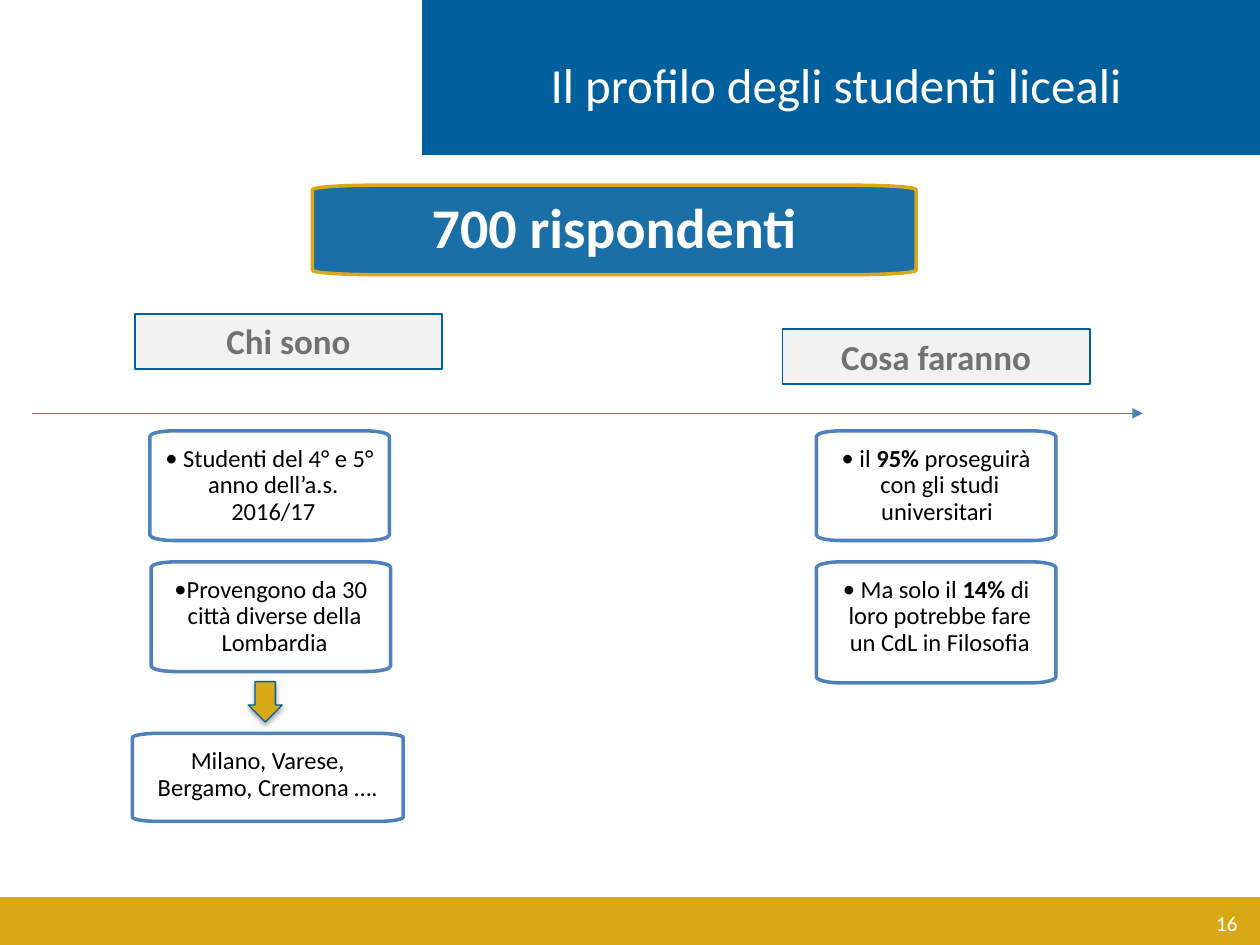
from lxml.etree import SubElement
from pptx import Presentation
from pptx.dml.color import RGBColor
from pptx.enum.shapes import MSO_CONNECTOR as CONN, MSO_SHAPE as SHAPE
from pptx.enum.text import MSO_ANCHOR as ANCHOR, MSO_AUTO_SIZE as AUTO, PP_ALIGN as ALIGN
from pptx.oxml.ns import qn
from pptx.util import Inches, Pt

BLUE, GOLD, CARD_LINE = "00609D", "D8A915", "4F81BD"
WHITE, BLACK, GREY, LIGHT = "FFFFFF", "000000", "727272", "F2F2F2"


def rgb(value):
    return RGBColor.from_string(value)


def put_text(sp, *parts, size=14, color=BLACK, bold=False, align=ALIGN.CENTER,
             anchor=ANCHOR.TOP, inset=(0.1, 0.05), spacing=1.0, bullet=False):
    """Fill the shape with one paragraph; every second part is bold."""
    tf = sp.text_frame
    tf.word_wrap = True
    tf.auto_size = AUTO.NONE
    tf.vertical_anchor = anchor
    tf.margin_left = tf.margin_right = Inches(inset[0])
    tf.margin_top = tf.margin_bottom = Inches(inset[1])
    p = tf.paragraphs[0]
    p.alignment = align
    p.line_spacing = spacing
    if bullet:
        pPr = p._p.get_or_add_pPr()
        pPr.set("marL", str(Inches(0.06)))
        pPr.set("indent", str(-Inches(0.06)))
        SubElement(pPr, qn("a:buFont"), typeface="Calibri")
        SubElement(pPr, qn("a:buChar"), char="•")
    for i, part in enumerate(parts):
        r = p.add_run()
        r.text = part
        r.font.name = "Calibri"
        r.font.size = Pt(size)
        r.font.bold = bold or i % 2 == 1
        r.font.color.rgb = rgb(color)


def round_corners(sp):
    """Turn every second side of an octagon into a quarter ellipse."""
    outline = sp._element.spPr.find(".//" + qn("a:path"))
    sides = list(outline)[:-1]
    ends = [(int(side[0].get("x")), int(side[0].get("y"))) for side in sides]
    for i in range(1, len(sides), 2):
        start, end = ends[i - 1], ends[i]
        corner = (start[0], end[1]) if i % 4 == 1 else (end[0], start[1])
        curve = sides[i]
        curve.tag = qn("a:cubicBezTo")
        curve.remove(curve[0])
        controls = [[round(a + 0.55 * (c - a)) for a, c in zip(point, corner)]
                    for point in (start, end)]
        for x, y in (*controls, end):
            SubElement(curve, qn("a:pt"), x=str(x), y=str(y))


class SlideBuilder:
    def __init__(self, slide):
        self.slide = slide
        self.shapes = slide.shapes

    def paint(self, sp, fill, line=None, width=1, opacity=100):
        sp.shadow.inherit = False
        sp.fill.solid()
        sp.fill.fore_color.rgb = rgb(fill)
        if opacity < 100:
            srgb = sp.fill._xPr.find(".//" + qn("a:srgbClr"))
            SubElement(srgb, qn("a:alpha"), val=str(opacity * 1000))
        if line:
            sp.line.color.rgb = rgb(line)
            sp.line.width = Pt(width)
        else:
            sp.line.fill.background()
        return sp

    def shape(self, kind, box, fill, **style):
        sp = self.shapes.add_shape(kind, *map(Inches, box))
        return self.paint(sp, fill, **style)

    def title(self, text, box):
        sp = self.shapes.title
        sp.left, sp.top, sp.width, sp.height = map(Inches, box)
        put_text(sp, text, size=28, color=WHITE)
        self.shapes._spTree.append(sp._element)  # in front of the header band

    def page_number(self, text, box):
        sp = self.shapes.add_textbox(*map(Inches, box))
        put_text(sp, text, size=12, color=WHITE, align=ALIGN.RIGHT, anchor=ANCHOR.MIDDLE)

    def heading(self, text, x, y):
        sp = self.shape(SHAPE.RECTANGLE, (x, y, 2.44, 0.44), LIGHT, line=BLUE)
        put_text(sp, text, size=20, color=GREY, bold=True)

    def card(self, box, *parts, fill=WHITE, line=CARD_LINE, **text_format):
        """Box with flat elliptical corners, a tenth of its width wide."""
        x, y, w, h = map(Inches, box)
        rx, ry = w // 10, h // 20
        right, bottom = x + w, y + h
        builder = self.shapes.build_freeform(x, y + ry)
        builder.add_line_segments([
            (x + rx, y), (right - rx, y), (right, y + ry), (right, bottom - ry),
            (right - rx, bottom), (x + rx, bottom), (x, bottom - ry)], close=True)
        sp = self.paint(builder.convert_to_shape(), fill, line=line, width=2, opacity=90)
        round_corners(sp)
        put_text(sp, *parts, inset=(0.12, 0.12), spacing=0.9, **text_format)

    def timeline(self, x1, x2, y):
        line = self.shapes.add_connector(CONN.STRAIGHT, *map(Inches, (x1, y, x2, y)))
        line.line.color.rgb = rgb("4B7EBC")
        line.line.width = Pt(0.75)
        SubElement(line.line._get_or_add_ln(), qn("a:tailEnd"), type="triangle")
        SubElement(line._element.spPr, qn("a:effectLst"))

    def down_arrow(self, box):
        sp = self.shape(SHAPE.DOWN_ARROW, box, GOLD, line=BLUE, width=0.75)
        sp.adjustments[0], sp.adjustments[1] = 0.6, 0.5
        effects = sp._element.spPr.find(qn("a:effectLst"))
        shadow = SubElement(effects, qn("a:outerShdw"), blurRad=str(Pt(3.1)),
                            dist=str(Pt(1.6)), dir="5400000", rotWithShape="0")
        color = SubElement(shadow, qn("a:srgbClr"), val=BLACK)
        SubElement(color, qn("a:alpha"), val="38000")


def main():
    prs = Presentation()
    prs.slide_width, prs.slide_height = Inches(10), Inches(7.5)
    s = SlideBuilder(prs.slides.add_slide(prs.slide_layouts[5]))

    s.shape(SHAPE.RECTANGLE, (0, 7.12, 10, 0.38), GOLD)
    s.shape(SHAPE.RECTANGLE, (3.35, 0, 6.65, 1.23), BLUE)
    s.page_number("16", (7.59, 7.13, 2.33, 0.4))
    s.title("Il profilo degli studenti liceali", (3.27, 0.38, 6.73, 0.44))

    s.card((2.48, 1.47, 4.79, 0.71), "700 rispondenti",
           fill=BLUE, line=GOLD, size=32, color=WHITE, bold=True)
    s.timeline(0.25, 9.07, 3.28)

    s.heading("Chi sono", 1.07, 2.49)
    s.card((1.19, 3.42, 1.9, 0.87), " Studenti del 4° e 5° anno dell’a.s. 2016/17", bullet=True)
    s.card((1.2, 4.46, 1.9, 0.87), "Provengono da 30 città diverse della Lombardia", bullet=True)
    s.down_arrow((1.97, 5.41, 0.27, 0.32))
    s.card((1.05, 5.82, 2.15, 0.7), "Milano, Varese, Bergamo, Cremona ….")

    s.heading("Cosa faranno", 6.21, 2.61)
    s.card((6.48, 3.42, 1.9, 0.87),
           " il ", "95%", " proseguirà con gli studi universitari ", bullet=True)
    s.card((6.48, 4.46, 1.9, 0.96),
           " Ma solo il ", "14%", " di loro potrebbe fare un CdL in Filosofia", bullet=True)

    prs.save("out.pptx")


if __name__ == "__main__":
    main()
